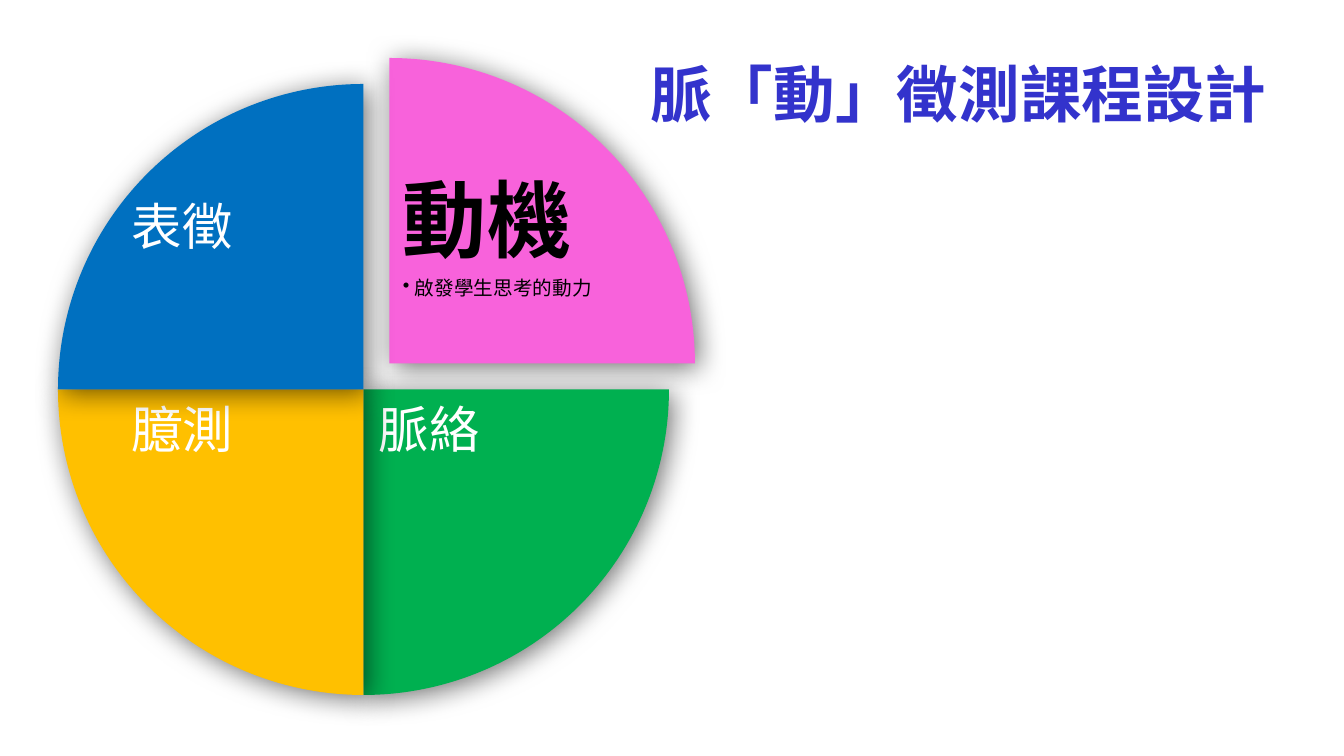
from lxml import etree
from pptx import Presentation
from pptx.dml.color import RGBColor
from pptx.enum.shapes import MSO_SHAPE
from pptx.enum.text import MSO_ANCHOR, PP_ALIGN
from pptx.oxml import parse_xml
from pptx.oxml.ns import qn
from pptx.util import Emu, Pt

PIE = MSO_SHAPE.PIE
MIDDLE = MSO_ANCHOR.MIDDLE
RIGHT = PP_ALIGN.RIGHT

PINK = RGBColor(0xF8, 0x62, 0xDB)
GREEN = RGBColor(0x00, 0xB0, 0x50)
AMBER = RGBColor(0xFF, 0xC0, 0x00)
BLUE = RGBColor(0x00, 0x70, 0xC0)
BLACK = RGBColor(0x00, 0x00, 0x00)
WHITE = RGBColor(0xFF, 0xFF, 0xFF)
INDIGO = RGBColor(0x33, 0x33, 0xCC)

SPARTAN = "League Spartan"
NOTO_SC = "Noto Sans CJK SC"
NOTO_TC = "Noto Sans CJK TC"

SHADOW = (
    '<a:outerShdw xmlns:a="http://schemas.openxmlformats.org/drawingml/2006/main"'
    ' blurRad="254000" dist="50800" dir="2700000" algn="tl" rotWithShape="0">'
    '<a:srgbClr val="000000"><a:alpha val="55000"/></a:srgbClr></a:outerShdw>'
)


def px(n):
    return Emu(round(n * 12192000 / 1344))


def write(par, text, font=SPARTAN, size=36, color=WHITE, bold=False):
    """Add a run in the given format, with the same font for East Asian text."""
    run = par.add_run()
    run.text = text
    run.font.name = font
    run.font.size = Pt(size)
    run.font.bold = bold
    run.font.color.rgb = color
    etree.SubElement(run.font._element, qn("a:ea")).set("typeface", font)


prs = Presentation()
prs.slide_width, prs.slide_height = px(1344), px(756)
slide = prs.slides.add_slide(prs.slide_layouts[5])
shapes = slide.shapes

# Pie quarters, clockwise from the top right, each with its label
SIZE = 611
QUARTER = 54
sectors = [
    ("動機", PINK, 84, 58, 395, 171, 8, dict(font=NOTO_SC, size=60, color=BLACK, bold=True)),
    ("脈絡", GREEN, 58, 84, 374, 400, 5, {}),
    ("臆測", AMBER, 58, 84, 127, 400, 5, {}),
    ("表徵", BLUE, 58, 84, 127, 197, 5, {}),
]
frames = []
for i, (label, color, left, top, x, y, inset, style) in enumerate(sectors):
    pie = shapes.add_shape(PIE, px(left), px(top), px(SIZE), px(SIZE))
    start = (i + 3) % 4
    pie.adjustments[0] = start * QUARTER
    pie.adjustments[1] = (start + 1) % 4 * QUARTER
    pie.fill.solid()
    pie.fill.fore_color.rgb = color
    pie.line.fill.background()
    pie.shadow.inherit = False
    pie._element.spPr.find(qn("a:effectLst")).append(parse_xml(SHADOW))

    frame = shapes.add_textbox(px(x), px(y), px(226), px(181)).text_frame
    frame.word_wrap = True
    frame.margin_left = frame.margin_right = px(inset)
    frame.margin_top = frame.margin_bottom = px(inset)
    par = frame.paragraphs[0]
    par.line_spacing = 0.9
    par.space_after = Pt(6)
    write(par, label, **style)
    frames.append(frame)

# Bullet under the first label
item = frames[0].add_paragraph()
item.level = 1
props = item._p.get_or_add_pPr()
props.set("marL", str(px(12)))
props.set("indent", str(-px(12)))
etree.SubElement(props, qn("a:buChar")).set("char", "•")
item.line_spacing = 0.9
write(item, "啟發學生思考的動力", font=NOTO_SC, size=14, color=BLACK)

# Title
title = shapes.title
title.left, title.top, title.width, title.height = px(67), px(30), px(1210), px(126)
title.text_frame.vertical_anchor = MIDDLE
par = title.text_frame.paragraphs[0]
par.alignment = RIGHT
for text, font in [
    ("脈", SPARTAN),
    ("「", NOTO_TC),
    ("動", SPARTAN),
    ("」", NOTO_TC),
    ("徵測課程設計", SPARTAN),
]:
    write(par, text, font=font, size=44, color=INDIGO, bold=True)

prs.save("out.pptx")
